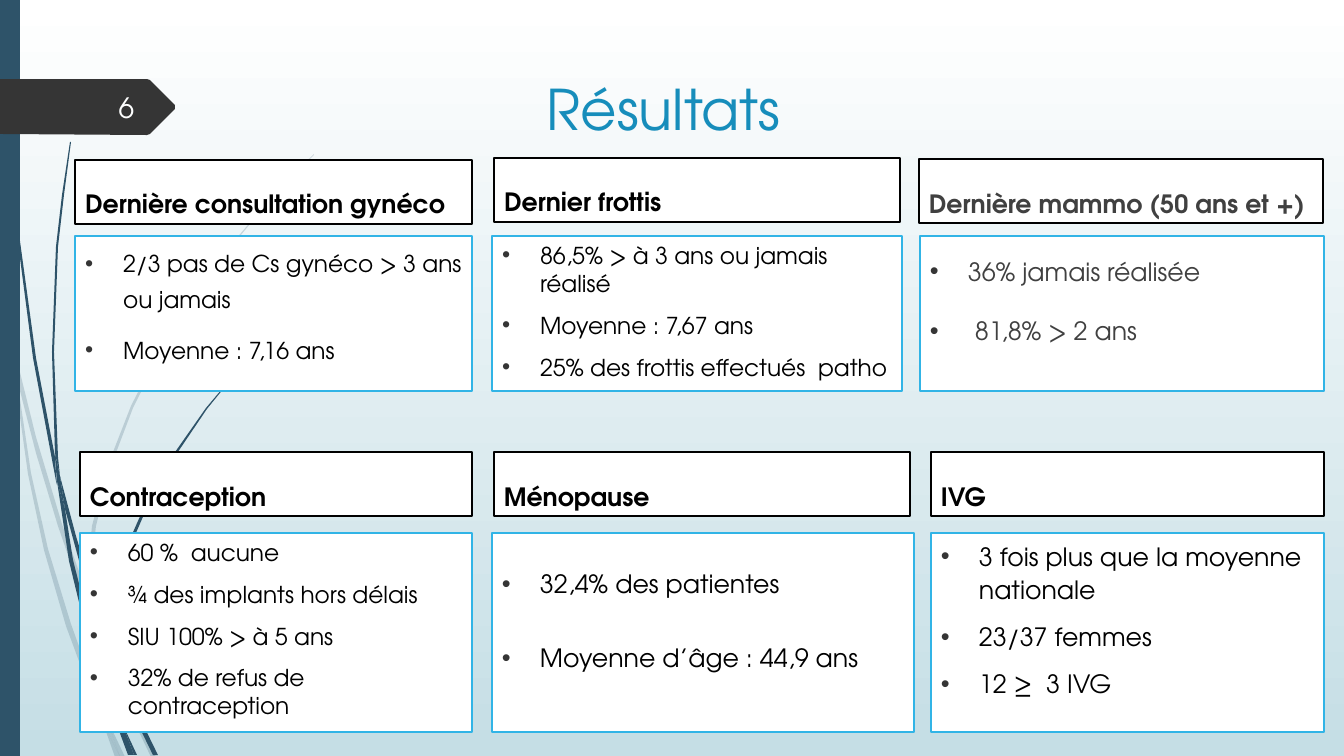
from lxml import etree
from pptx import Presentation
from pptx.dml.color import RGBColor
from pptx.enum.shapes import MSO_SHAPE
from pptx.enum.text import MSO_ANCHOR, MSO_AUTO_SIZE, PP_ALIGN
from pptx.oxml.ns import qn
from pptx.util import Pt

RECTANGLE = MSO_SHAPE.RECTANGLE
TOP, MIDDLE, BOTTOM = MSO_ANCHOR.TOP, MSO_ANCHOR.MIDDLE, MSO_ANCHOR.BOTTOM
LEFT, CENTER, RIGHT = PP_ALIGN.LEFT, PP_ALIGN.CENTER, PP_ALIGN.RIGHT
FIXED_SIZE = MSO_AUTO_SIZE.NONE

WHITE = RGBColor(0xFF, 0xFF, 0xFF)
BLACK = RGBColor(0x00, 0x00, 0x00)
PALE_BLUE = RGBColor(0xC5, 0xDE, 0xE5)
NAVY = RGBColor(0x2E, 0x53, 0x69)
TITLE_BLUE = RGBColor(0x17, 0x8D, 0xBB)
BORDER_BLUE = RGBColor(0x31, 0xB4, 0xE6)
CHARCOAL = RGBColor(0x35, 0x35, 0x35)
GREY = RGBColor(0x40, 0x40, 0x40)
NUMBER_WHITE = RGBColor(0xFE, 0xFF, 0xFF)

FONT = "TeX Gyre Adventor"
EMU_PER_PX = 914400 / 100.8
SLIDE_SIZE = (1344, 756)
COMPARISON_LAYOUT = 4
BULLET_INDENT = 38
HEADING_HEIGHT = 64

# Outlines of the curved stems, as corner points in px
PALE_STEMS = [
    [(11, 353), (9, 325), (0, 284), (0, 301), (10, 347)],
    [(58, 526), (85, 604), (86, 591), (62, 524), (36, 437), (14, 348), (17, 379), (36, 453)],
    [(93, 612), (89, 601), (89, 615), (124, 700), (151, 757), (156, 757), (128, 698)],
    [(120, 757), (125, 757), (106, 717)],
    [(94, 688), (71, 624), (48, 549), (31, 473), (17, 379), (11, 353), (28, 474),
     (44, 550), (66, 626), (93, 699), (102, 720), (100, 713)],
    [(89, 589), (96, 526), (111, 466), (133, 408), (161, 352), (231, 247), (270, 200),
     (292, 176), (314, 155), (314, 154), (291, 176), (270, 199), (230, 246), (159, 351),
     (131, 406), (108, 465), (92, 526), (86, 589), (86, 591), (89, 601)],
    [(102, 720), (115, 757), (120, 757)],
    [(97, 698), (94, 688), (100, 713), (102, 720), (120, 757), (106, 717)],
]
DARK_STEMS = [
    [(7, 111), (17, 235), (33, 358), (56, 481), (57, 485), (55, 461), (55, 457),
     (36, 358), (19, 234), (8, 110), (5, 48), (4, 0), (3, 0), (4, 48)],
    [(89, 597), (107, 650), (107, 636), (94, 595), (76, 536), (60, 476), (65, 509)],
    [(114, 654), (111, 646), (112, 661), (133, 714), (153, 755), (158, 755), (137, 712)],
    [(111, 697), (99, 662), (73, 560), (65, 509), (57, 481), (69, 561), (94, 664),
     (112, 714), (118, 728), (117, 723)],
    [(60, 476), (58, 457), (54, 352), (58, 247), (64, 195), (71, 142), (70, 142),
     (62, 195), (56, 247), (52, 352), (55, 453)],
    [(134, 755), (137, 755), (123, 725)],
    [(57, 481), (65, 509), (60, 476), (55, 453), (55, 457)],
    [(112, 638), (126, 556), (159, 480), (207, 409), (233, 377), (247, 362), (263, 347),
     (262, 347), (247, 361), (233, 376), (206, 408), (157, 478), (123, 555), (107, 636),
     (111, 646)],
    [(118, 728), (128, 755), (132, 755)],
    [(117, 712), (111, 697), (117, 723), (118, 728), (131, 755), (134, 755), (123, 725)],
]
NUMBER_ARROW = [(0, 79), (147, 79), (150, 80), (175, 105), (175, 109),
                (150, 134), (147, 135), (0, 134)]

# heading, its left, top and width, list box, items, text size, line spacing, colours
CARDS = [
    ("Dernière consultation gynéco", (75, 160, 397), (75, 236, 397, 155),
     ["2/3 pas de Cs gynéco > 3 ans ou jamais", "Moyenne : 7,16 ans"], 16.6, 1.3, BLACK),
    ("Dernier frottis", (494, 158, 406), (492, 236, 410, 155),
     ["86,5% > à 3 ans ou jamais réalisé", "Moyenne : 7,67 ans",
      "25% des frottis effectués  patho"], 16.6, 1, BLACK),
    ("Dernière mammo (50 ans et +)", (919, 159, 404), (920, 236, 404, 155),
     ["36% jamais réalisée", " 81,8% > 2 ans"], 18, 1.5, GREY),
    ("Contraception", (80, 452, 392), (80, 533, 392, 199),
     ["60 %  aucune", "¾ des implants hors délais", "SIU 100% > à 5 ans",
      "32% de refus de contraception"], 16.6, 1, BLACK),
    ("Ménopause", (494, 452, 416), (492, 533, 422, 199),
     ["32,4% des patientes", "Moyenne d’âge : 44,9 ans"], 18, 2, BLACK),
    ("IVG", (931, 452, 393), (931, 533, 393, 199),
     ["3 fois plus que la moyenne nationale", "23/37 femmes", "12 ≥  3 IVG"],
     18, 1.1, BLACK),
]


def px(length):
    return round(length * EMU_PER_PX)


def add_bullet(paragraph):
    properties = paragraph._p.get_or_add_pPr()
    properties.set("marL", str(px(BULLET_INDENT)))
    properties.set("indent", str(-px(BULLET_INDENT)))
    color = etree.SubElement(properties, qn("a:buClr"))
    etree.SubElement(color, qn("a:srgbClr"), val=str(CHARCOAL))
    etree.SubElement(properties, qn("a:buFont"), typeface="Arial")
    etree.SubElement(properties, qn("a:buChar"), char="•")


def write(shape, lines, size=18, color=BLACK, bold=False, align=LEFT, anchor=TOP,
          spacing=1, before=0, bullets=False):
    frame = shape.text_frame
    frame.word_wrap = True
    frame.auto_size = FIXED_SIZE
    frame.vertical_anchor = anchor
    for index, line in enumerate(lines):
        paragraph = frame.add_paragraph() if index else frame.paragraphs[0]
        paragraph.alignment = align
        paragraph.line_spacing = spacing
        paragraph.space_before = Pt(before)
        if bullets:
            add_bullet(paragraph)
        run = paragraph.add_run()
        run.text = line
        run.font.name = FONT
        run.font.size = Pt(size)
        run.font.bold = bold
        run.font.color.rgb = color


class SlideBuilder:
    def __init__(self, presentation):
        self.slide = presentation.slides.add_slide(
            presentation.slide_layouts[COMPARISON_LAYOUT])
        self.shapes = self.slide.shapes
        self.bodies = list(self.slide.placeholders)[1:]

    def background(self, top_color, bottom_color):
        fill = self.slide.background.fill
        fill.gradient()
        fill.gradient_angle = 270
        for stop, color, position in zip(fill.gradient_stops, (top_color, bottom_color), (0, 1)):
            stop.color.rgb = color
            stop.position = position

    def paint(self, shape, color, opacity=100):
        shape.shadow.inherit = False
        shape.fill.solid()
        shape.fill.fore_color.rgb = color
        shape.line.fill.background()
        if opacity < 100:
            rgb = shape.fill._xPr.find(qn("a:solidFill"))[0]
            etree.SubElement(rgb, qn("a:alpha"), val=str(opacity * 1000))

    def outline(self, points, color, opacity=100):
        builder = self.shapes.build_freeform(*points[0], scale=EMU_PER_PX)
        builder.add_line_segments(points[1:])
        self.paint(builder.convert_to_shape(), color, opacity)

    def rectangle(self, box, color):
        shape = self.shapes.add_shape(RECTANGLE, *map(px, box))
        self.paint(shape, color)
        return shape

    def place(self, placeholder, box):
        """Move a placeholder to its box, in front of what is already drawn."""
        placeholder.left, placeholder.top, placeholder.width, placeholder.height = map(px, box)
        self.shapes.element.append(placeholder.element)
        return placeholder

    def title(self, text, box):
        write(self.place(self.shapes.title, box), [text], size=40, color=TITLE_BLUE, align=CENTER)

    def panel(self, box, border, lines, **text_format):
        """Framed text, in a body placeholder as long as one is free."""
        if self.bodies:
            shape = self.place(self.bodies.pop(0), box)
            shape.fill.solid()
            shape.fill.fore_color.rgb = WHITE
        else:
            shape = self.rectangle(box, WHITE)
        shape.line.color.rgb = border
        shape.line.width = Pt(1.25)
        write(shape, lines, before=10, **text_format)

    def card(self, heading, heading_box, list_box, items, size, spacing, color):
        self.panel((*heading_box, HEADING_HEIGHT), BLACK, [heading],
                   color=color, bold=True, anchor=BOTTOM)
        self.panel(list_box, BORDER_BLUE, items, size=size, color=color,
                   spacing=spacing, bullets=True)

    def label(self, text, box, **text_format):
        write(self.shapes.add_textbox(*map(px, box)), [text], **text_format)


def main():
    presentation = Presentation()
    presentation.slide_width, presentation.slide_height = map(px, SLIDE_SIZE)
    builder = SlideBuilder(presentation)
    builder.background(WHITE, PALE_BLUE)
    for stem in PALE_STEMS:
        builder.outline(stem, NAVY, opacity=20)
    for stem in DARK_STEMS:
        builder.outline(stem, NAVY)
    builder.rectangle((0, 0, 20, 756), NAVY)
    builder.outline(NUMBER_ARROW, CHARCOAL)
    builder.title("Résultats ", (180, 69, 983, 141))
    for card in CARDS:
        builder.card(*card)
    builder.label("6", (58, 87, 86, 40), size=20, color=NUMBER_WHITE, align=RIGHT, anchor=MIDDLE)
    presentation.save("out.pptx")


if __name__ == "__main__":
    main()
